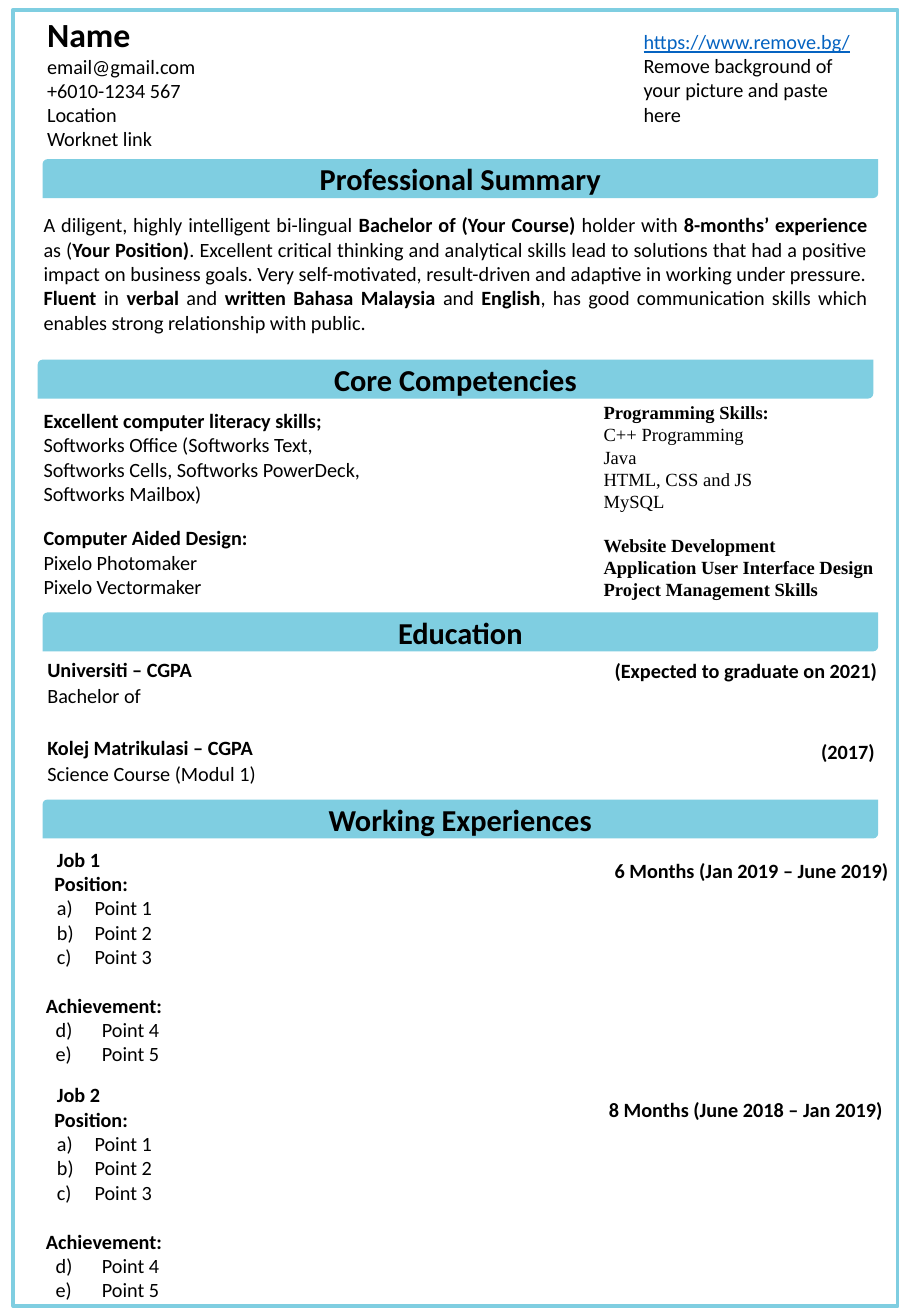
"""Build a one-page résumé slide with section bars and text blocks."""
from lxml import etree
from pptx import Presentation
from pptx.dml.color import RGBColor
from pptx.enum.shapes import MSO_SHAPE
from pptx.enum.text import MSO_ANCHOR, MSO_AUTO_SIZE, PP_ALIGN
from pptx.oxml.ns import qn
from pptx.util import Inches, Pt

RECT, BAR = MSO_SHAPE.RECTANGLE, MSO_SHAPE.ROUND_2_DIAG_RECTANGLE
MIDDLE, GROW = MSO_ANCHOR.MIDDLE, MSO_AUTO_SIZE.SHAPE_TO_FIT_TEXT
LEFT, CENTER, FULL = PP_ALIGN.LEFT, PP_ALIGN.CENTER, PP_ALIGN.JUSTIFY
TEAL = RGBColor(0x7F, 0xCE, 0xE1)
BLACK = RGBColor(0, 0, 0)
BLUE = RGBColor(0x05, 0x63, 0xC1)
SANS, SERIF = "Calibri", "Times New Roman"

BARS = [
    (0.35, 1.31, "Professional Summary"),
    (0.31, 2.96, "Core Competencies"),
    (0.35, 5.04, "Education"),
    (0.35, 6.58, "Working Experiences"),
]

CONTACT = [
    ("**Name**", {"size": 20}),
    "email@gmail.com",
    "+6010-1234 567",
    "Location",
    "Worknet link",
]
PHOTO = [
    ("https://www.remove.bg/", {"color": BLUE, "line": True}),
    "Remove background of your picture and paste here",
]
SUMMARY = [
    "A diligent, highly intelligent bi-lingual **Bachelor of (Your Course) **"
    "holder with **8-months’ experience** as (**Your Position)**. Excellent "
    "critical thinking and analytical skills lead to solutions that had a "
    "positive impact on business goals. Very self-motivated, result-driven "
    "and adaptive in working under pressure. **Fluent** in **verbal** and "
    "**written Bahasa Malaysia** and **English**, has good communication "
    "skills which enables strong relationship with public."
]
OFFICE = [
    "**Excellent computer literacy skills;** Softworks Office (Softworks "
    "Text, Softworks Cells, Softworks PowerDeck, Softworks Mailbox)",
    ("**Computer Aided Design:**", {"gap": 12}),
    "Pixelo Photomaker",
    "Pixelo Vectormaker",
]
CODE = [
    "**Programming Skills:**",
    "C++ Programming",
    "Java",
    "HTML, CSS and JS",
    "MySQL",
    ("**Website Development**", {"gap": 12.65}),
    "**Application User Interface Design**",
    "**Project Management Skills**",
]
SCHOOL = [
    "**Universiti – CGPA**",
    ("Bachelor of", {"gap": 1}),
    ("**Kolej Matrikulasi – CGPA**", {"gap": 16.65}),
    ("Science Course (Modul 1)", {"gap": 1}),
]
DUTY = {"margin": 0.45, "hang": 0.31, "start": 1}
AWARD = {"margin": 0.51, "hang": 0.38, "start": 4}
TASKS = [
    ("**Position:**", {"margin": 0.12}),
    ("Point 1", DUTY),
    ("Point 2", DUTY),
    ("Point 3", DUTY),
    ("**Achievement:**", {"margin": 0.05, "gap": 14.65}),
    ("Point 4", AWARD),
    ("Point 5", AWARD),
]
JOBS = [(6.92, "**Job 1**"), (8.86, "**Job 2**")]

TIGHT = {"pad": (0, 0.01), "margin": 0.01}
BLOCKS = [
    (0.26, 0.06, 3.16, 1.25, CONTACT, {"margin": 0.03}),
    (5.2, 0.19, 2.04, 0.91, PHOTO, {}),
    (0.26, 1.7, 6.98, 1.11, SUMMARY, {"align": FULL}),
    (0.26, 3.31, 2.89, 1.68, OFFICE, {}),
    (4.87, 3.25, 3.75, 1.77, CODE, {"face": SERIF, "size": 11}),
    (0.38, 5.4, 3.86, 1.08, SCHOOL, TIGHT),
    (5.05, 5.41, 2.19, 0.22, ["**(Expected to graduate on 2021)**"], TIGHT),
    (6.75, 6.07, 1, 0.22, ["**(2017)**"], TIGHT),
    (5.05, 7.05, 2.79, 0.22, ["**6 Months (Jan 2019 – June 2019)**"], TIGHT),
    (4.74, 9.02, 2.79, 0.22, ["**8 Months (June 2018 – Jan 2019)**"],
     {**TIGHT, "align": CENTER}),
]
BLOCKS += [(0.23, top, 7.31, 1.92, [(name, {"margin": 0.14})] + TASKS, {})
           for top, name in JOBS]


def style(para, size, face=SANS, color=BLACK):
    para.font.size, para.font.name = Pt(size), face
    para.font.color.rgb = color


def write(para, text, look):
    """Fill one paragraph; pairs of ** mark bold text."""
    para.alignment = look.get("align", LEFT)
    if "gap" in look:
        para.space_before = Pt(look["gap"])
    props = para._p.get_or_add_pPr()
    props.set("marL", str(Inches(look.get("margin", 0))))
    props.set("indent", str(-Inches(look.get("hang", 0))))
    if "start" in look:
        mark = etree.SubElement(props, qn("a:buAutoNum"))
        mark.set("type", "alphaLcParenR")
        mark.set("startAt", str(look["start"]))
    style(para, look.get("size", 12), look.get("face", SANS),
          look.get("color", BLACK))
    para.font.underline = look.get("line", False)
    parts = [(part, i % 2 == 1)
             for i, part in enumerate(text.split("**")) if part]
    for part, bold in parts:
        run = para.add_run()
        run.text = part
        if len(parts) > 1:
            run.font.bold = bold
        else:
            para.font.bold = bold


def add_block(slide, x, y, w, h, lines, base):
    box = slide.shapes.add_textbox(Inches(x), Inches(y), Inches(w), Inches(h))
    frame = box.text_frame
    frame.word_wrap, frame.auto_size = True, GROW
    side, top = base.get("pad", (0.1, 0.05))
    frame.margin_left = frame.margin_right = Inches(side)
    frame.margin_top = Inches(top)
    frame.margin_bottom = Inches(0 if "pad" in base else top)
    for i, line in enumerate(lines):
        text, look = (line, {}) if isinstance(line, str) else line
        para = frame.add_paragraph() if i else frame.paragraphs[0]
        write(para, text, {**base, **look})


def add_bar(slide, x, y, title):
    bar = slide.shapes.add_shape(BAR, Inches(x), Inches(y), Inches(6.88),
                                 Inches(0.32))
    bar.adjustments[0] = 0.13
    bar.shadow.inherit = False
    bar.fill.solid()
    bar.fill.fore_color.rgb = TEAL
    bar.line.fill.background()
    frame = bar.text_frame
    frame.margin_left = frame.margin_right = 0
    frame.margin_top = frame.margin_bottom = 0
    frame.vertical_anchor = MIDDLE
    para = frame.paragraphs[0]
    para.text, para.alignment = title, CENTER
    style(para, 18)
    para.font.bold = True


def main():
    deck = Presentation()
    deck.slide_width, deck.slide_height = Inches(7.5), Inches(10.83)
    slide = deck.slides.add_slide(deck.slide_layouts[6])
    edge = slide.shapes.add_shape(RECT, Inches(0.11), Inches(0.08),
                                  Inches(7.28), Inches(10.67))
    edge.shadow.inherit = False
    edge.fill.background()
    edge.line.color.rgb, edge.line.width = TEAL, Pt(2.25)
    for bar in BARS:
        add_bar(slide, *bar)
    for block in BLOCKS:
        add_block(slide, *block)
    deck.save("out.pptx")


if __name__ == "__main__":
    main()
